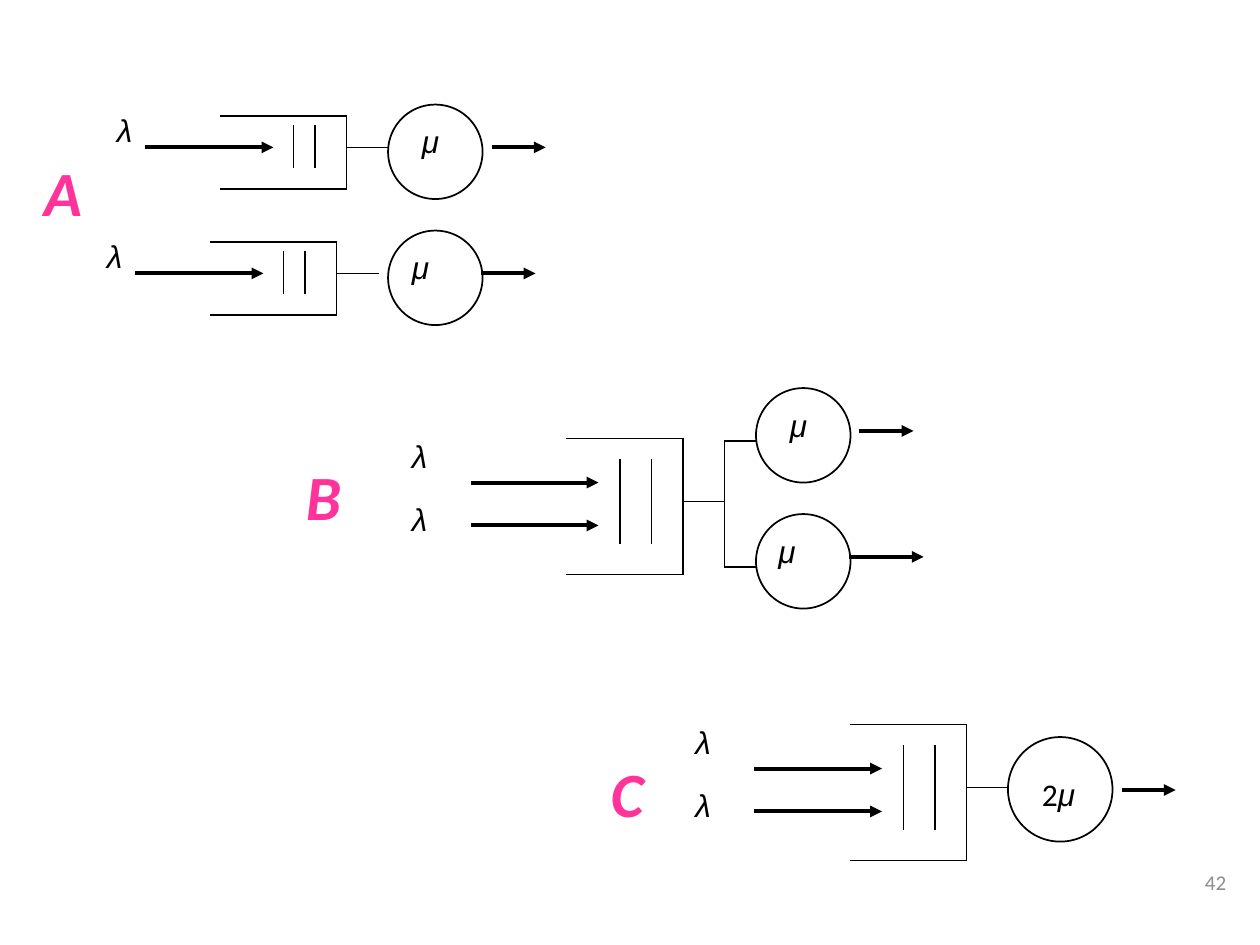
from dataclasses import dataclass

import pptx
import pptx.dml.color
import pptx.enum.shapes
import pptx.enum.text
import pptx.oxml
import pptx.oxml.ns
import pptx.util
from pptx.util import Inches

BLACK, PINK, GREY = "000000", "FF3399", "8C8C8C"
THIN, THICK = 1, 2.25
GREEK = {"name": "Arial", "size": 18, "italic": True}
DIGIT = {"name": "Calibri", "size": 18}
LETTER = {"name": "Calibri", "size": 36, "bold": True, "italic": True, "color": PINK}
PAGE = {"name": "Calibri", "size": 12, "color": GREY}


@dataclass(frozen=True)
class QueueStyle:
    """Sizes of a waiting line, with offsets from its top left corner."""
    w: float
    h: float
    bars: tuple[float, ...]
    bar_top: float
    bar_h: float
    arrow_x: float
    arrow_ys: tuple[float, ...]
    rate_x: float
    rate_ys: tuple[float, ...]
    outlet_y: float


@dataclass(frozen=True)
class Queue:
    style: QueueStyle
    x: float
    y: float


@dataclass(frozen=True)
class Server:
    """A circle; the label and the exit arrow are offset from its top left corner."""
    x: float
    y: float
    exit_from: float
    exit_to: float
    label_x: float = 0.17
    label_y: float = 0.09
    label_w: float = 0.58
    exit_y: float = 0.34
    d: float = 0.75
    runs: tuple = (("μ", GREEK),)


@dataclass(frozen=True)
class System:
    letter: str
    x: float
    y: float
    w: float
    queues: tuple[Queue, ...]
    servers: tuple[Server, ...]
    branches: tuple[tuple[float, float, float, float], ...] = ()


SINGLE = QueueStyle(1, 0.58, (0.58, 0.75), 0.08, 0.33,
                    -0.58, (0.25,), -0.92, (-0.09,), 0.25)
SHARED = QueueStyle(0.92, 1.08, (0.42, 0.67), 0.17, 0.66,
                    -0.75, (0.35, 0.69), -1.33, (-0.06, 0.44), 0.5)

SYSTEMS = (
    System("A", 0.25, 1.17, 0.75,
           (Queue(SINGLE, 1.75, 0.92), Queue(SINGLE, 1.67, 1.92)),
           (Server(3.08, 0.83, 0.84, 1.25),
            Server(3.08, 1.83, 0.75, 1.17, label_x=0.09))),
    System("B", 2.33, 3.58, 0.83,
           (Queue(SHARED, 4.5, 3.48),),
           (Server(6, 3.08, 0.83, 1.25),
            Server(6, 4.08, 0.75, 1.33, label_x=0.08)),
           ((5.75, 3.5, 5.75, 4.5), (5.75, 3.5, 6, 3.5), (5.75, 4.5, 6, 4.5))),
    System("C", 4.75, 5.94, 0.83,
           (Queue(SHARED, 6.75, 5.75),),
           (Server(8, 5.85, 0.92, 1.33, label_y=0.25, label_w=0.83, exit_y=0.42,
                   d=0.83, runs=(("2", DIGIT), ("μ", GREEK))),)),
)


def rgb(color: str) -> pptx.dml.color.RGBColor:
    return pptx.dml.color.RGBColor.from_string(color)


def add_line(shapes, x1: float, y1: float, x2: float, y2: float, arrow: bool = False) -> None:
    s = shapes.add_connector(pptx.enum.shapes.MSO_CONNECTOR.STRAIGHT,
                             Inches(x1), Inches(y1), Inches(x2), Inches(y2))
    s.line.color.rgb = rgb(BLACK)
    s.line.width = pptx.util.Pt(THICK if arrow else THIN)
    ln = s._element.spPr.find(pptx.oxml.ns.qn("a:ln"))
    ln.set("cap", "sq")
    if arrow:
        ln.append(pptx.oxml.parse_xml(
            f'<a:tailEnd {pptx.oxml.ns.nsdecls("a")} type="triangle"/>'))
    s._element.spPr.append(pptx.oxml.parse_xml(
        f'<a:effectLst {pptx.oxml.ns.nsdecls("a")}/>'))


def add_text(shapes, x: float, y: float, w: float, h: float, *runs: tuple[str, dict]):
    tf = shapes.add_textbox(Inches(x), Inches(y), Inches(w), Inches(h)).text_frame
    tf.word_wrap = True
    p = tf.paragraphs[0]
    for text, style in runs:
        r = p.add_run()
        r.text = text
        values = {**style, "size": pptx.util.Pt(style["size"])}
        r.font.color.rgb = rgb(values.pop("color", BLACK))
        for key, value in values.items():
            setattr(r.font, key, value)
    return tf


def add_queue(shapes, queue: Queue) -> None:
    q, x, y = queue.style, queue.x, queue.y
    right, bottom = x + q.w, y + q.h
    add_line(shapes, x, y, right, y)
    add_line(shapes, right, y, right, bottom)
    add_line(shapes, x, bottom, right, bottom)
    for bar in q.bars:
        add_line(shapes, x + bar, y + q.bar_top, x + bar, y + q.bar_top + q.bar_h)
    for arrow_y, rate_y in zip(q.arrow_ys, q.rate_ys):
        start = x + q.arrow_x
        add_line(shapes, start, y + arrow_y, start + 1, y + arrow_y, arrow=True)
        add_text(shapes, x + q.rate_x, y + rate_y, 0.58, 0.4, ("λ", GREEK))
    add_line(shapes, right, y + q.outlet_y, right + 0.33, y + q.outlet_y)


def add_server(shapes, v: Server) -> None:
    s = shapes.add_shape(pptx.enum.shapes.MSO_SHAPE.OVAL,
                         Inches(v.x), Inches(v.y), Inches(v.d), Inches(v.d))
    s.shadow.inherit = False
    s.fill.background()
    s.line.color.rgb = rgb(BLACK)
    s.line.width = pptx.util.Pt(THIN)
    add_line(shapes, v.x + v.exit_from, v.y + v.exit_y,
             v.x + v.exit_to, v.y + v.exit_y, arrow=True)
    add_text(shapes, v.x + v.label_x, v.y + v.label_y, v.label_w, 0.4, *v.runs)


def add_system(slide, system: System) -> None:
    shapes = slide.shapes.add_group_shape().shapes
    for queue in system.queues:
        add_queue(shapes, queue)
    for server in system.servers:
        add_server(shapes, server)
    for branch in system.branches:
        add_line(shapes, *branch)
    add_text(shapes, system.x, system.y, system.w, 0.7, (system.letter, LETTER))


def main() -> None:
    prs = pptx.Presentation()
    prs.slide_width, prs.slide_height = Inches(10), Inches(7.5)
    slide = prs.slides.add_slide(prs.slide_layouts[6])
    tf = add_text(slide.shapes, 7.5, 6.75, 2.33, 0.5, ("42", PAGE))
    tf.vertical_anchor = pptx.enum.text.MSO_ANCHOR.MIDDLE
    tf.paragraphs[0].alignment = pptx.enum.text.PP_ALIGN.RIGHT
    for system in SYSTEMS:
        add_system(slide, system)
    prs.save("out.pptx")


if __name__ == "__main__":
    main()
